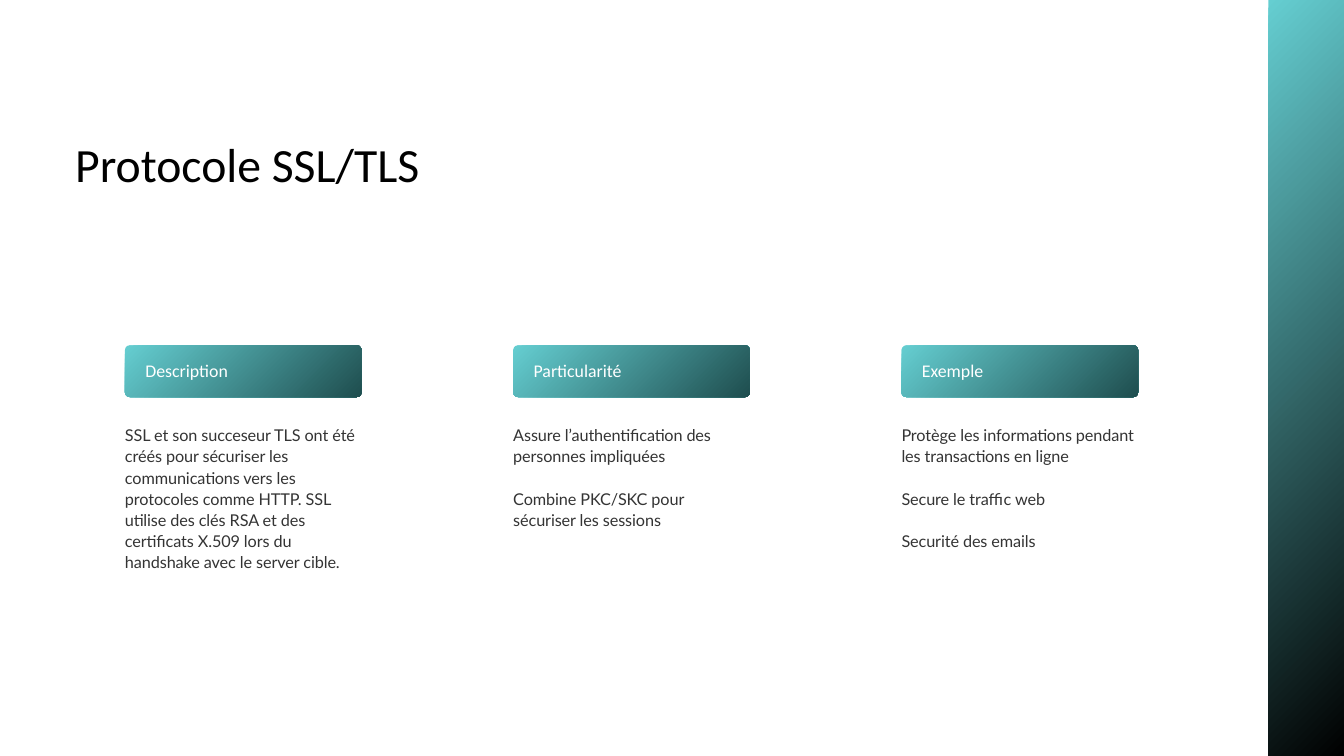
from pptx import Presentation
from pptx.dml.color import RGBColor
from pptx.enum.shapes import MSO_SHAPE as Shape
from pptx.util import Pt

# Content
TITLE = "Protocole SSL/TLS"
COLS = [
    ("Description", [
        "SSL et son succeseur TLS ont été créés pour sécuriser les "
        "communications vers les protocoles comme HTTP. SSL utilise des clés "
        "RSA et des certificats X.509 lors du handshake avec le server cible.",
    ]),
    ("Particularité", [
        "Assure l’authentification des personnes impliquées",
        "Combine PKC/SKC pour sécuriser les sessions",
    ]),
    ("Exemple", [
        "Protège les informations pendant les transactions en ligne",
        "Secure le traffic web",
        "Securité des emails",
    ]),
]
HEIGHTS = [162, 116, 139]

# Layout, in points
WIDE, HIGH = 1440, 810
LEFT, STEP, COL = 133.9, 416, 253.4
BAR_TOP, BAR = 370, 55.4
INSET = 21.9
BAND = 81
TEAL, DARK, BLACK = "65CED1", "1F4E4F", "000000"


def color(code):
    return RGBColor.from_string(code)


def add_text(slide, lines, x, y, w, h, size, lead, font="Calibri",
             ink=BLACK, track=0, gap=0):
    frame = slide.shapes.add_textbox(Pt(x), Pt(y), Pt(w), Pt(h)).text_frame
    frame.word_wrap = True
    frame.margin_left = frame.margin_right = 0
    frame.margin_top = frame.margin_bottom = 0
    for i, line in enumerate(lines):
        para = frame.paragraphs[0] if i == 0 else frame.add_paragraph()
        para.line_spacing = Pt(lead)
        para.space_before = Pt(gap if i else 0)
        run = para.add_run()
        run.text = line
        run.font.size = Pt(size)
        run.font.name = font
        run.font.color.rgb = color(ink)
        if track:
            run.font._element.set("spc", str(round(track * 100)))


def add_block(slide, kind, x, y, w, h, start, end):
    block = slide.shapes.add_shape(kind, Pt(x), Pt(y), Pt(w), Pt(h))
    block.shadow.inherit = False
    block.line.fill.background()
    block.fill.gradient()
    block.fill.gradient_angle = 315  # counter-clockwise: to lower right
    for stop, code in zip(block.fill.gradient_stops, (start, end)):
        stop.color.rgb = color(code)
    return block


def main():
    deck = Presentation()
    deck.slide_width, deck.slide_height = Pt(WIDE), Pt(HIGH)
    slide = deck.slides.add_slide(deck.slide_layouts[6])

    # Title
    add_text(slide, [TITLE], 80.6, 147.6, 1052.6, 58.3, 51.1, 57.8)

    # Columns: label bar with text below
    for i, ((label, lines), high) in enumerate(zip(COLS, HEIGHTS)):
        x = LEFT + i * STEP
        bar = add_block(slide, Shape.ROUNDED_RECTANGLE, x, BAR_TOP, COL, BAR,
                        TEAL, DARK)
        bar.adjustments[0] = 0.09
        add_text(slide, [label], x + INSET, 386.6, COL - INSET, 22.3, 19.1,
                 21.6, ink="FFFFFF")
        add_text(slide, lines, x, 454.3, COL, high, 17.4, 22.6, font="Lato",
                 ink="343434", track=-0.1, gap=22.6)

    # Side band
    add_block(slide, Shape.RECTANGLE, WIDE - BAND, 0, BAND, HIGH, TEAL, BLACK)

    deck.save("out.pptx")


if __name__ == "__main__":
    main()
